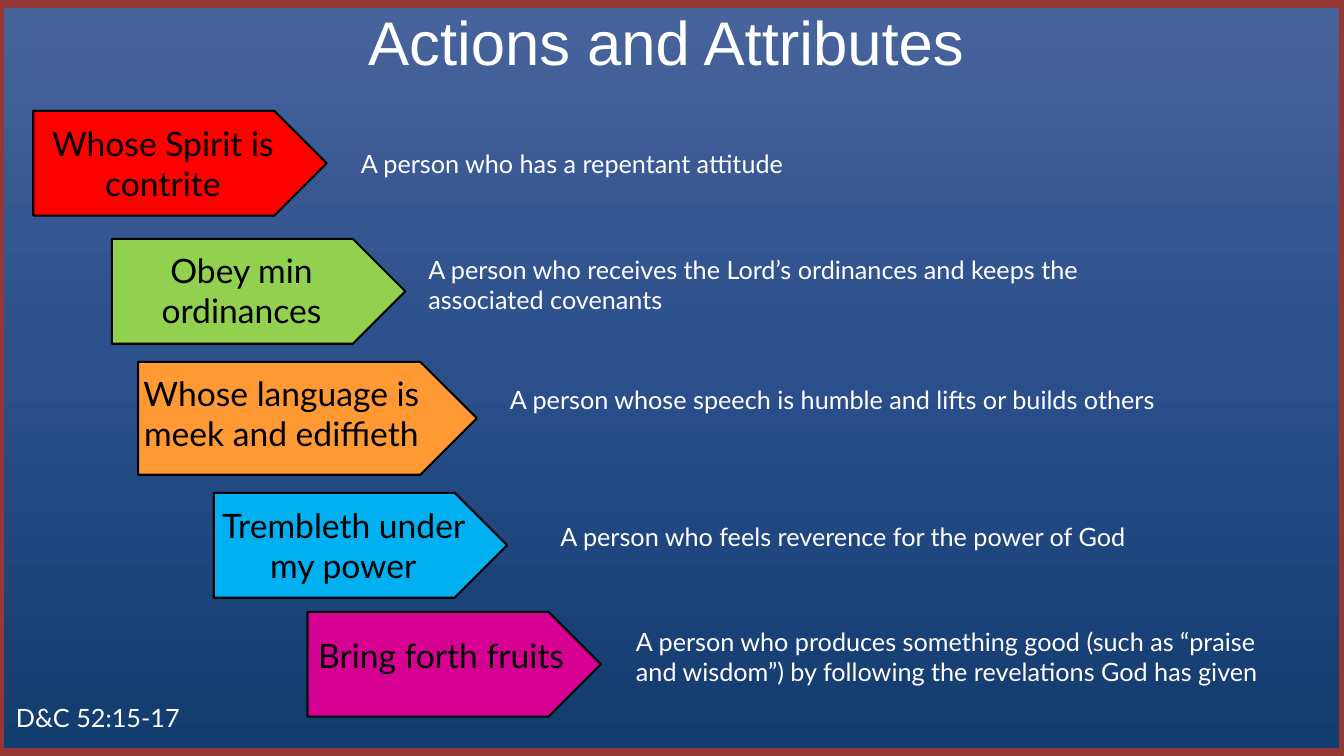
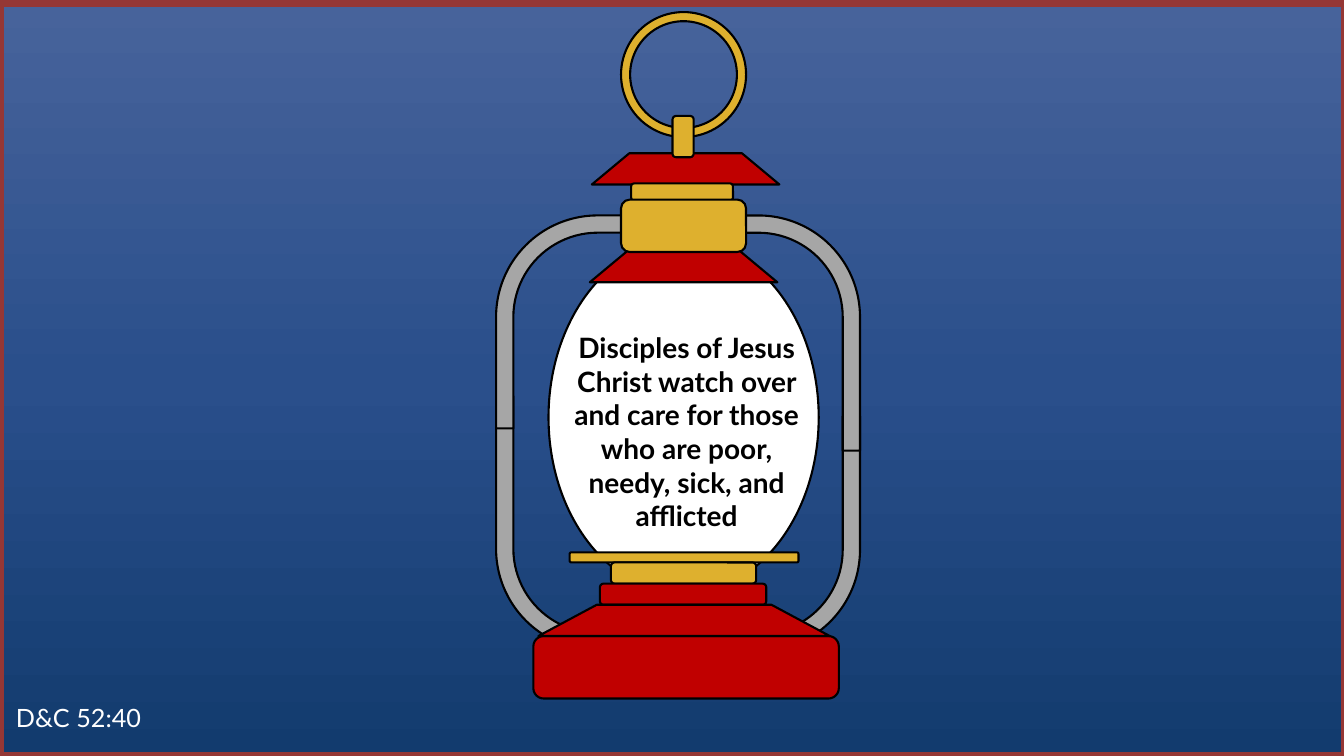
from copy import deepcopy
from pptx import Presentation
from pptx.dml.color import RGBColor
from pptx.enum.shapes import MSO_SHAPE as Kind
from pptx.enum.text import PP_ALIGN as Align
from pptx.oxml.ns import qn
from pptx.util import Inches, Pt

WHITE, BLACK, EDGE = "FFFFFF", "000000", "953735"
RED, GOLD, GREY = "C00000", "DEB02E", "A6A6A6"
SKY = ((0, "47639B"), (0.5, "2A4F8B"), (1, "123B6E"))
BODY, HEAD = "Lato", "Arial"

# arrow box, label box, colour, label, note box, note
STEPS = (
    ((0.33, 1.1, 2.91, 1.04), (0.29, 1.17, 2.65, 0.91), "FF0000",
     "Whose Spirit is contrite",
     (3.48, 1.42, 6.67, 0.4), "A person who has a repentant attitude"),
    ((1.11, 2.37, 2.91, 1.04), (1.07, 2.43, 2.65, 0.91), "92D050",
     "Obey min ordinances",
     (4.15, 2.47, 6.67, 1.01),
     "A person who receives the Lord’s ordinances and keeps the "
     "associated covenants"),
    ((1.37, 3.59, 3.36, 1.12), (1.15, 3.65, 3.28, 0.91), "FF9933",
     "Whose language is meek and ediffieth",
     (4.96, 3.76, 6.67, 0.4),
     "A person whose speech is humble and lifts or builds others"),
    ((2.12, 4.89, 2.91, 1.04), (2.08, 4.96, 2.65, 0.91), "00B0F0",
     "Trembleth under my power",
     (5.46, 5.12, 6.67, 0.4),
     "A person who feels reverence for the power of God"),
    ((3.05, 6.07, 2.91, 1.04), (3.05, 6.25, 2.65, 0.5), "D60093",
     "Bring forth fruits",
     (6.21, 6.16, 6.67, 0.71),
     "A person who produces something good (such as “praise and wisdom”) "
     "by following the revelations God has given"),
)

# box, flips
PIPES = (
    ((6.78, 4.13, 1.75, 2.49), "HV"),
    ((6.78, 1.98, 1.75, 2.49), "H"),
    ((4.92, 3.93, 1.75, 2.68), "V"),
    ((4.92, 1.98, 1.75, 2.27), ""),
)
BEND = (0.098, 0.139, 0.119, 0.576)

# kind, box, colour, turn, from back to front
ROOF, BLOCK = Kind.FLOWCHART_MANUAL_OPERATION, Kind.ROUNDED_RECTANGLE
PARTS = (
    (Kind.OVAL, (5.44, 2.39, 2.68, 3.5), WHITE, 0),
    (ROOF, (5.85, 2.49, 1.86, 0.31), RED, 180),
    (ROOF, (5.87, 1.52, 1.86, 0.31), RED, 180),
    (BLOCK, (6.26, 1.82, 1.01, 0.17), GOLD, 0),
    (BLOCK, (6.16, 1.98, 1.24, 0.52), GOLD, 0),
    (Kind.DONUT, (6.16, 0.12, 1.24, 1.24), GOLD, 0),
    (BLOCK, (6.57, 1.25, 0.41, 0.21), GOLD, 270),
    (BLOCK, (5.65, 5.48, 2.27, 0.1), GOLD, 0),
    (BLOCK, (5.29, 6.31, 3.03, 0.62), RED, 0),
    (BLOCK, (6.06, 5.58, 1.44, 0.21), GOLD, 0),
    (BLOCK, (5.95, 5.79, 1.65, 0.21), RED, 0),
    (ROOF, (5.34, 6, 2.89, 0.31), RED, 180),
)


def rgb(code):
    return RGBColor.from_string(code)


def place(box):
    return [Inches(n) for n in box]


def draw(shapes, kind, box, fill=None, line=BLACK, width=1.5, adj=(), turn=0):
    shape = shapes.add_shape(kind, *place(box))
    shape.shadow.inherit = False
    shape.rotation = turn
    for i, value in enumerate(adj):
        shape.adjustments[i] = value
    if fill:
        shape.fill.solid()
        shape.fill.fore_color.rgb = rgb(fill)
    shape.line.color.rgb = rgb(line)
    shape.line.width = Pt(width)
    return shape


def write(shapes, box, text, size=18, color=WHITE, font=BODY,
          align=Align.LEFT, bold=False):
    frame = shapes.add_textbox(*place(box)).text_frame
    frame.word_wrap = True
    par = frame.paragraphs[0]
    par.text = text
    par.alignment = align
    par.font.size, par.font.name, par.font.bold = Pt(size), font, bold
    par.font.color.rgb = rgb(color)


def flip(shape, axes):
    for axis in axes:
        shape._element.spPr.find(qn("a:xfrm")).set("flip" + axis, "1")


def shade(shape):
    """Fill with the three-stop sky, top to bottom."""
    fill = shape.fill
    fill.gradient()
    fill.gradient_angle = 270
    stops = shape._element.spPr.find(".//" + qn("a:gsLst"))
    stops.append(deepcopy(stops[-1]))
    for stop, (spot, color) in zip(fill.gradient_stops, SKY):
        stop.position = spot
        stop.color.rgb = rgb(color)


def start(deck, box, verse):
    """Add a slide with its framed sky and verse reference."""
    shapes = deck.slides.add_slide(deck.slide_layouts[6]).shapes
    shade(draw(shapes, Kind.RECTANGLE, box, line=EDGE, width=6))
    write(shapes, (0.06, 6.92, 6.67, 0.4), verse)
    return shapes


def steps(deck):
    shapes = start(deck, (0, 0.04, 13.32, 7.42), "D&C 52:15-17")
    write(shapes, (0, -0.01, 13.22, 0.84), "Actions and Attributes",
          44, font=HEAD, align=Align.CENTER)
    for arrow, label, color, name, spot, note in STEPS:
        group = shapes.add_group_shape().shapes
        draw(group, Kind.PENTAGON, arrow, color)
        write(group, label, name, 24, BLACK, align=Align.CENTER)
        write(shapes, spot, note)


def lantern(deck):
    shapes = start(deck, (0, 0.03, 13.34, 7.47), "D&C 52:40")
    group = shapes.add_group_shape().shapes
    for box, axes in PIPES:
        flip(draw(group, Kind.BENT_ARROW, box, GREY, adj=BEND), axes)
    for kind, box, color, turn in PARTS:
        adj = (0.073,) if kind == Kind.DONUT else ()
        draw(group, kind, box, color, adj=adj, turn=turn)
    write(group, (5.52, 3.23, 2.58, 2.12),
          "Disciples of Jesus Christ watch over and care for those who are "
          "poor, needy, sick, and afflicted",
          20, BLACK, align=Align.CENTER, bold=True)


def main():
    deck = Presentation()
    deck.slide_width, deck.slide_height = Inches(13.33), Inches(7.5)
    steps(deck)
    lantern(deck)
    deck.save("out.pptx")


if __name__ == "__main__":
    main()
